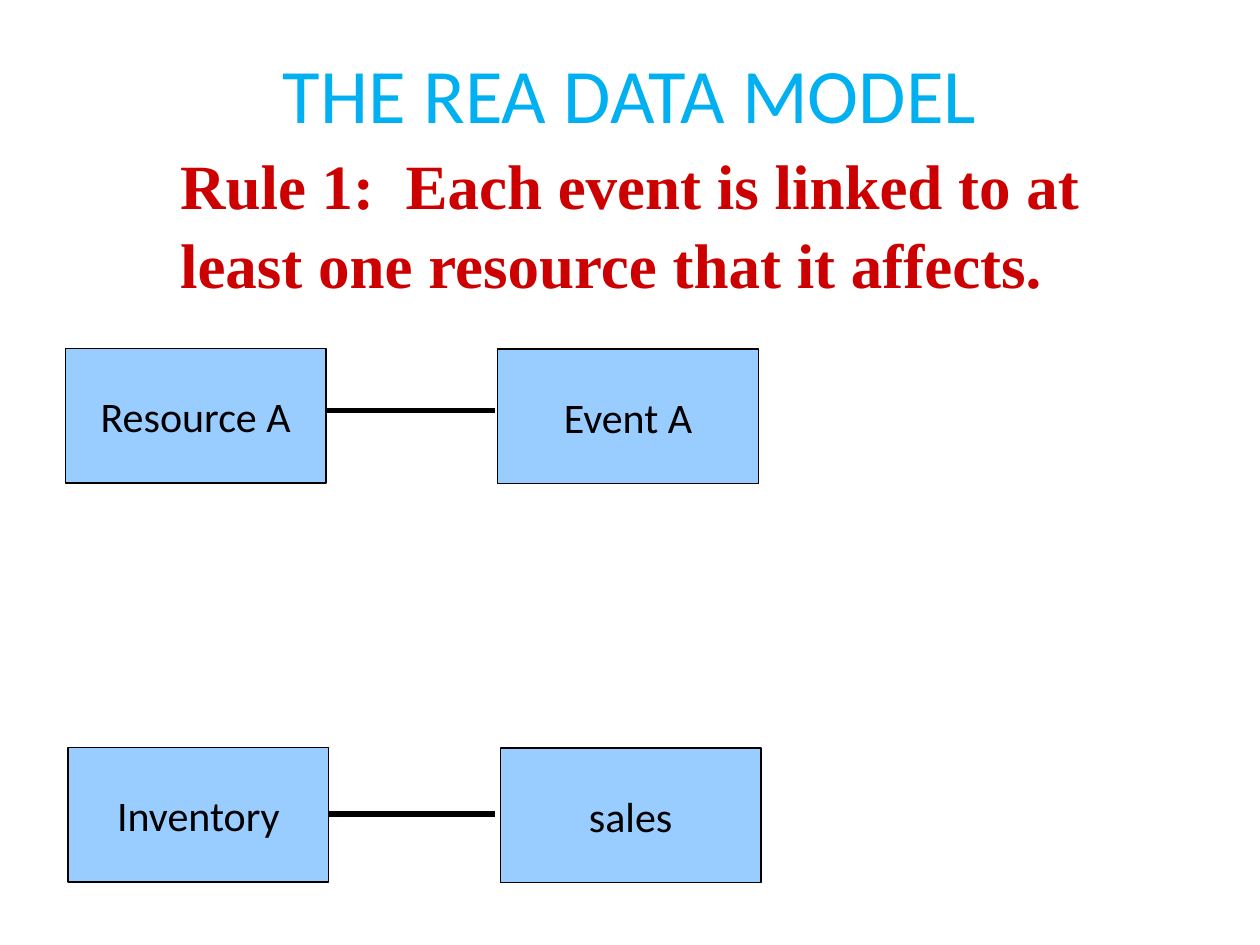
from dataclasses import dataclass

from lxml.etree import SubElement
from pptx import Presentation
from pptx.dml.color import RGBColor
from pptx.enum.shapes import MSO_CONNECTOR, MSO_SHAPE
from pptx.enum.text import MSO_ANCHOR, MSO_AUTO_SIZE, PP_ALIGN
from pptx.oxml.ns import qn
from pptx.util import Pt


@dataclass(frozen=True)
class Theme:
    title: RGBColor = RGBColor(0x00, 0xB0, 0xF0)
    rule: RGBColor = RGBColor(0xCC, 0x00, 0x00)
    box: RGBColor = RGBColor(0x99, 0xCC, 0xFF)
    ink: RGBColor = RGBColor(0x00, 0x00, 0x00)
    title_size: int = 44
    rule_size: int = 36
    box_size: int = 24
    sans: str = "Calibri"
    serif: str = "Times New Roman"


THEME = Theme()
BOX_W, BOX_H = 149, 77
BOX_PITCH = 247
LINK_END = 283


def add_run(p, text, font, size, color, bold=False):
    r = p.add_run()
    r.text = text
    r.font.name = font
    r.font.size = Pt(size)
    r.font.bold = bold
    r.font.color.rgb = color


def add_title(s, text):
    tf = s.shapes.add_textbox(Pt(36), Pt(21.6), Pt(648), Pt(62.6)).text_frame
    tf.word_wrap = True
    tf.vertical_anchor = MSO_ANCHOR.MIDDLE
    p = tf.paragraphs[0]
    p.alignment = PP_ALIGN.CENTER
    add_run(p, text, THEME.sans, THEME.title_size, THEME.title)


def add_rule(s, text):
    tf = s.shapes.add_textbox(Pt(23.8), Pt(77.8), Pt(666), Pt(94.3)).text_frame
    tf.word_wrap = True
    tf.auto_size = MSO_AUTO_SIZE.SHAPE_TO_FIT_TEXT
    p = tf.paragraphs[0]
    p.level = 2
    p.line_spacing = 1.05
    # Indent of the third outline level
    ppr = p._p.get_or_add_pPr()
    ppr.set("marL", str(Pt(72)))
    ppr.set("indent", "0")
    add_run(p, text, THEME.serif, THEME.rule_size, THEME.rule, bold=True)


def add_entity(s, name, left, top):
    sp = s.shapes.add_shape(MSO_SHAPE.RECTANGLE, Pt(left), Pt(top), Pt(BOX_W), Pt(BOX_H))
    sp.shadow.inherit = False
    sp.fill.solid()
    sp.fill.fore_color.rgb = THEME.box
    sp.line.color.rgb = THEME.ink
    sp.line.width = Pt(0.75)
    tf = sp.text_frame
    tf.word_wrap = False
    tf.vertical_anchor = MSO_ANCHOR.MIDDLE
    p = tf.paragraphs[0]
    p.alignment = PP_ALIGN.CENTER
    add_run(p, name, THEME.sans, THEME.box_size, THEME.ink)


def add_link(s, left, y):
    line = s.shapes.add_connector(MSO_CONNECTOR.STRAIGHT, Pt(left), Pt(y), Pt(LINK_END), Pt(y))
    line.line.color.rgb = THEME.ink
    line.line.width = Pt(3)
    SubElement(line._element.spPr, qn("a:effectLst"))


def add_relation(s, resource, event, left, top, link_y):
    add_entity(s, resource, left, top)
    add_entity(s, event, left + BOX_PITCH, top + 0.5)
    add_link(s, left + BOX_W, link_y)


def main():
    prs = Presentation()
    prs.slide_width, prs.slide_height = Pt(720), Pt(540)
    s = prs.slides.add_slide(prs.slide_layouts[6])

    # Heading and rule
    add_title(s, "THE REA DATA MODEL")
    add_rule(s, "Rule 1:  Each event is linked to at least one resource that it affects.")

    # General pattern, then its example
    add_relation(s, "Resource A", "Event A", 37.4, 199, 234.7)
    add_relation(s, "Inventory", "sales", 38.9, 427, 465.1)

    prs.save("out.pptx")


if __name__ == "__main__":
    main()
